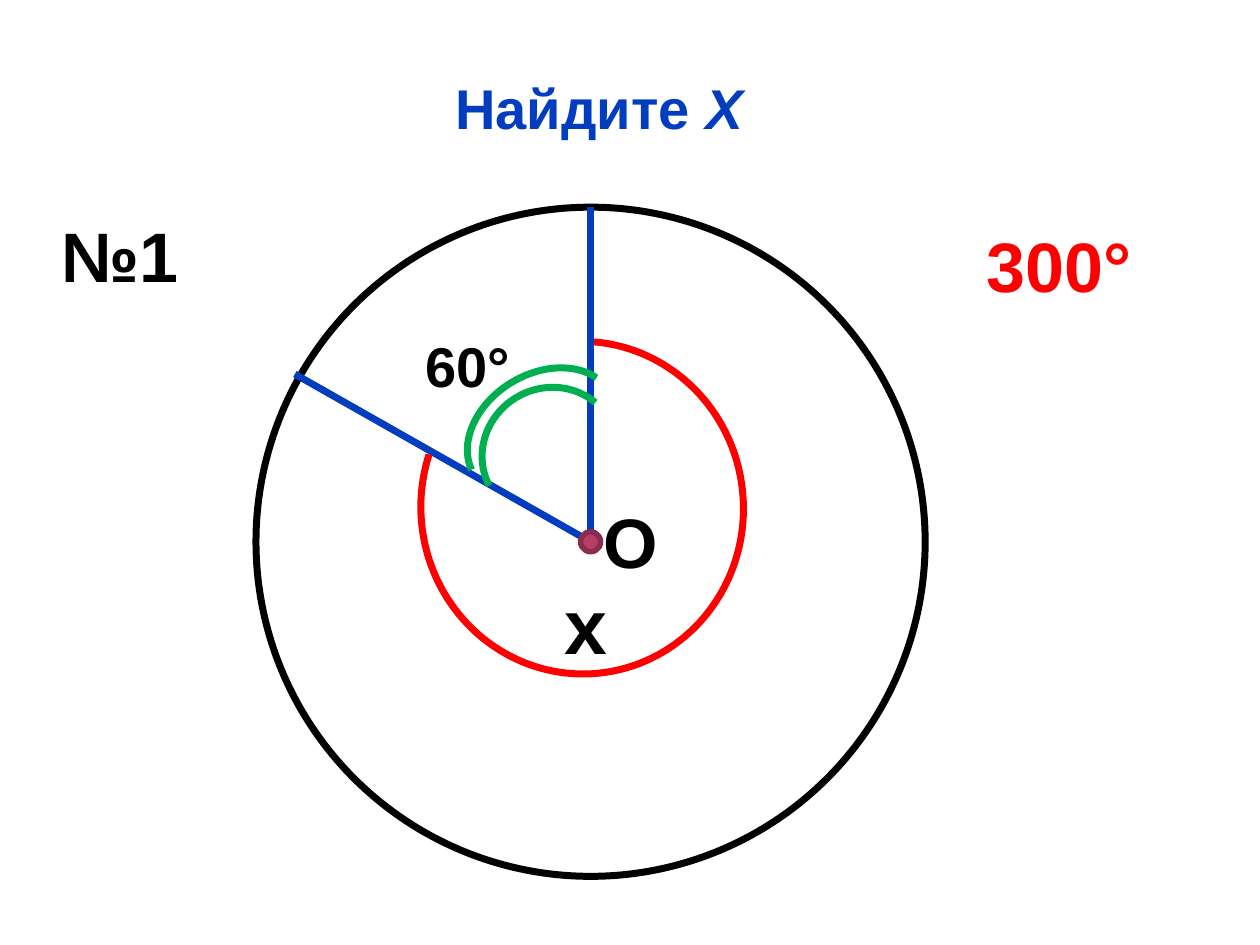
"""Build a geometry slide: find the reflex arc x around the centre of a circle."""
from pptx import Presentation
from pptx.dml.color import RGBColor
from pptx.enum.shapes import MSO_CONNECTOR, MSO_SHAPE
from pptx.enum.text import MSO_ANCHOR, MSO_AUTO_SIZE, PP_ALIGN
from pptx.oxml.ns import qn
from pptx.util import Pt

COLORS = {"black": "000000", "white": "FFFFFF", "blue": "033DBF", "red": "FF0000",
          "green": "00B050", "plum": "B83D68", "dark plum": "882D4D"}
FONT = "Arial"
LINE_WIDTH = 4
CENTER = (337.5, 309.6)
CIRCLE_RADIUS = 191.2
DOT_RADIUS = 5.7

TITLE_BOX = (48.2, 25.9, 588.2, 58.3)
TITLE_RUNS = [("Найдите ", False), ("Х", True)]
RADIUS_ENDS = [(337.5, 118.4), (168.5, 213.8)]
RED_ARC = ((237.6, 198, 190.1, 184.3), 84.9, (189.2, 114.25), "red")
GREEN_ARCS = [
    ((264.2, 213.8, 90.7, 67), 328.6, (183.6, 346.3), "green"),
    ((275, 221.8, 78.5, 74.9), 328.6, (183.6, 343), "green"),
]
LABELS = [
    ("№1", (28.1, 118.1, 84.2, 55.4), 40, "black", True),
    ("60°", (236.2, 185.8, 67.7, 46.1), 32, "black", True),
    ("x", (315.4, 326.2, 33.8, 60.5), 44, "black", True),
    ("300°", (556.6, 123.8, 112.3, 55.4), 40, "red", True),
    ("О", (337.7, 281.5, 46.1, 55.4), 40, "black", False),
]


def rgb(name):
    return RGBColor.from_string(COLORS[name])


def points(values):
    return [Pt(value) for value in values]


def add_run(paragraph, text, size, color, italic=None):
    run = paragraph.add_run()
    run.text = text
    run.font.name = FONT
    run.font.size = Pt(size)
    run.font.bold = True
    run.font.italic = italic
    run.font.color.rgb = rgb(color)


def set_line(shape, color, width=LINE_WIDTH):
    shape.line.color.rgb = rgb(color)
    shape.line.width = Pt(width)


def fill_title(title):
    title.left, title.top, title.width, title.height = points(TITLE_BOX)
    frame = title.text_frame
    frame.auto_size = MSO_AUTO_SIZE.NONE
    frame.vertical_anchor = MSO_ANCHOR.BOTTOM
    paragraph = frame.paragraphs[0]
    paragraph.alignment = PP_ALIGN.CENTER
    for text, italic in TITLE_RUNS:
        add_run(paragraph, text, 32, "blue", italic)


def add_disc(slide, radius, fill, line, width):
    x, y = CENTER
    box = (x - radius, y - radius, 2 * radius, 2 * radius)
    disc = slide.shapes.add_shape(MSO_SHAPE.OVAL, *points(box))
    disc.shadow.inherit = False
    disc.fill.solid()
    disc.fill.fore_color.rgb = rgb(fill)
    set_line(disc, line, width)


def add_radius(slide, end):
    radius = slide.shapes.add_connector(MSO_CONNECTOR.STRAIGHT, *points(CENTER + end))
    set_line(radius, "blue")
    properties = radius._element.spPr
    properties.append(properties.makeelement(qn("a:effectLst"), {}))


def add_arc(slide, box, rotation, angles, color):
    arc = slide.shapes.add_shape(MSO_SHAPE.ARC, *points(box))
    arc.shadow.inherit = False
    arc.rotation = rotation
    for index, angle in enumerate(angles):
        arc.adjustments[index] = angle * 0.6
    arc.fill.background()
    set_line(arc, color)


def add_label(slide, text, box, size, color, wrap):
    frame = slide.shapes.add_textbox(*points(box)).text_frame
    frame.word_wrap = wrap
    frame.auto_size = MSO_AUTO_SIZE.SHAPE_TO_FIT_TEXT
    add_run(frame.paragraphs[0], text, size, color)


def main():
    presentation = Presentation()
    presentation.slide_width, presentation.slide_height = Pt(720), Pt(540)
    slide = presentation.slides.add_slide(presentation.slide_layouts[5])
    fill_title(slide.shapes.title)
    add_disc(slide, CIRCLE_RADIUS, "white", "black", LINE_WIDTH)
    for end in RADIUS_ENDS:
        add_radius(slide, end)
    for arc in [RED_ARC, *GREEN_ARCS]:
        add_arc(slide, *arc)
    for label in LABELS:
        add_label(slide, *label)
    add_disc(slide, DOT_RADIUS, "plum", "dark plum", 3.15)
    presentation.save("out.pptx")


if __name__ == "__main__":
    main()
